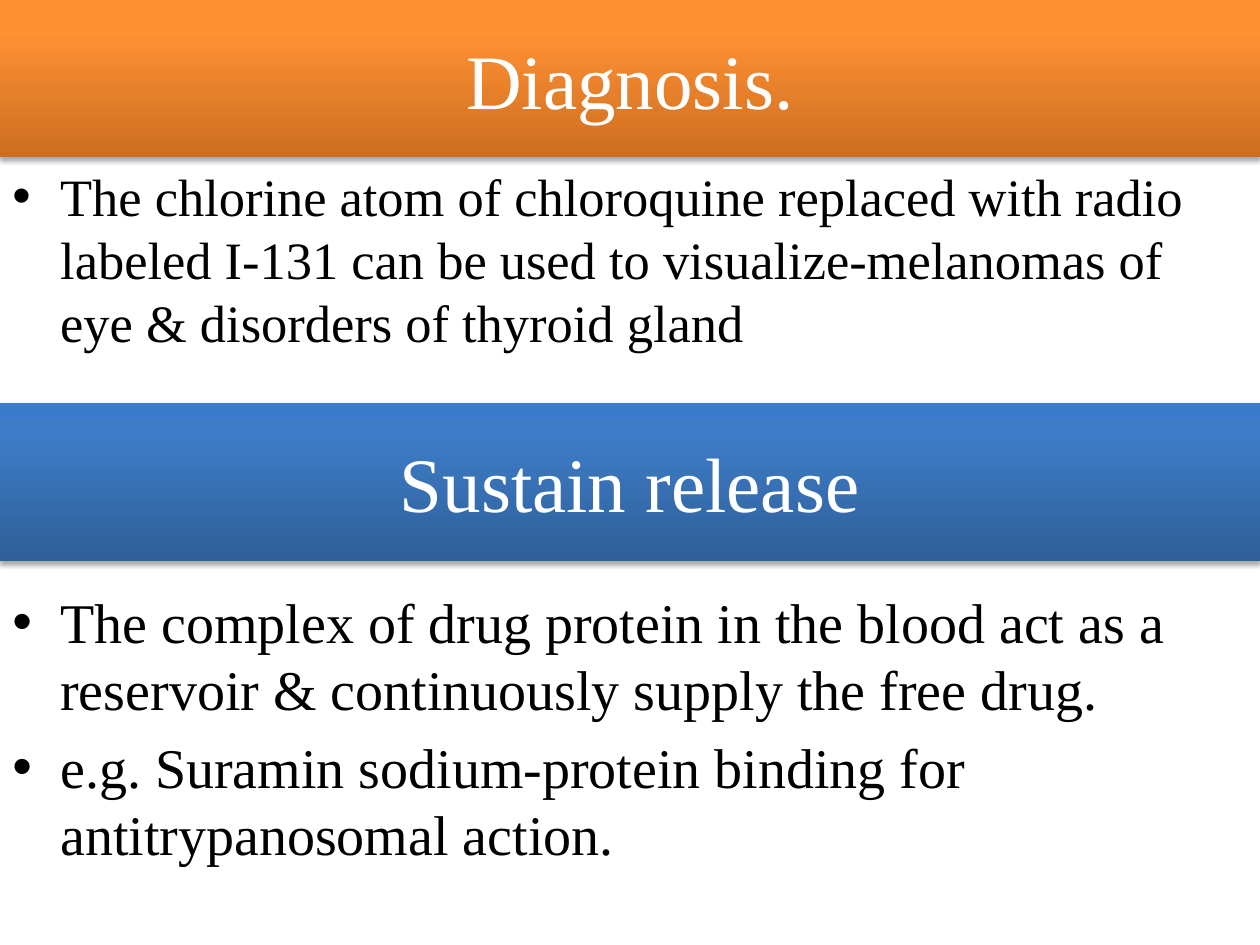
from dataclasses import dataclass

from lxml.etree import SubElement
from pptx import Presentation
from pptx.dml.color import RGBColor
from pptx.enum.shapes import MSO_SHAPE
from pptx.enum.text import MSO_ANCHOR, PP_ALIGN
from pptx.oxml.ns import qn
from pptx.util import Inches, Pt


@dataclass(frozen=True)
class Theme:
    font: str = "Times New Roman"
    heading_size: int = 44
    heading_color: str = "FFFFFF"
    body_color: str = "000000"
    shadow: str = "000000"
    # Gradient stops run from the bottom edge to the top edge.
    orange: tuple = ((0, "CC6E20"), (80, "FF9034"), (100, "FF9136"))
    blue: tuple = ((0, "2F5F99"), (80, "3D7CC7"), (100, "3A7CCB"))


THEME = Theme()
WIDTH, HEIGHT = Inches(10), Inches(7.5)
BANNER_SHARE = 1 / 6
INDENT = Inches(0.38)


def add_element(parent, tag, **attributes):
    return SubElement(parent, qn(tag), {key: str(value) for key, value in attributes.items()})


def fill_upward(shape, stops):
    """Fill with a gradient of (percent, colour) stops, bottom to top."""
    shape.fill.gradient()
    shape.fill.gradient_angle = 90
    stop_list = shape._element.spPr.find(qn("a:gradFill")).find(qn("a:gsLst"))
    for stop in list(stop_list):
        stop_list.remove(stop)
    for percent, color in stops:
        stop = add_element(stop_list, "a:gs", pos=percent * 1000)
        add_element(stop, "a:srgbClr", val=color)


def add_shadow(shape):
    shape.shadow.inherit = False
    effects = shape._element.spPr.find(qn("a:effectLst"))
    shadow = add_element(effects, "a:outerShdw", blurRad=Pt(3.1), dist=Pt(1.8),
                         dir=90 * 60000, rotWithShape=0)
    color = add_element(shadow, "a:srgbClr", val=THEME.shadow)
    add_element(color, "a:alpha", val=35000)


def write_text(para, text, *, size, color, align=PP_ALIGN.LEFT):
    para.alignment = align
    span = para.add_run()
    span.text = text
    span.font.name = THEME.font
    span.font.size = Pt(size)
    span.font.color.rgb = RGBColor.from_string(color)


def add_bullet(para):
    """Give the paragraph a hanging bullet and a gap of 20% above."""
    properties = para._p.get_or_add_pPr()
    properties.set("marL", str(INDENT))
    properties.set("indent", str(-INDENT))
    gap = add_element(properties, "a:spcBef")
    add_element(gap, "a:spcPct", val=20000)
    add_element(properties, "a:buFont", typeface="Arial")
    add_element(properties, "a:buChar", char="•")


def add_banner(page, box, text, stops):
    banner = page.shapes.add_shape(MSO_SHAPE.RECTANGLE, *box)
    banner.line.fill.background()
    fill_upward(banner, stops)
    add_shadow(banner)
    frame = banner.text_frame
    frame.word_wrap = True
    frame.vertical_anchor = MSO_ANCHOR.MIDDLE
    write_text(frame.paragraphs[0], text, size=THEME.heading_size,
               color=THEME.heading_color, align=PP_ALIGN.CENTER)


def add_bullet_list(page, box, items, size):
    frame = page.shapes.add_textbox(*box).text_frame
    frame.word_wrap = True
    for index, item in enumerate(items):
        para = frame.add_paragraph() if index else frame.paragraphs[0]
        write_text(para, item, size=size, color=THEME.body_color)
        add_bullet(para)


def add_section(page, box, heading, stops, items, size, gap=0):
    """Place a banner at the top of the box and its bullets below the gap."""
    left, top, width, height = box
    banner_height = int(HEIGHT * BANNER_SHARE)
    used = banner_height + gap
    add_banner(page, (left, top, width, banner_height), heading, stops)
    add_bullet_list(page, (left, top + used, width, height - used), items, size)


def main():
    deck = Presentation()
    deck.slide_width, deck.slide_height = WIDTH, HEIGHT
    page = deck.slides.add_slide(deck.slide_layouts[6])
    add_section(
        page, (0, 0, WIDTH, Inches(3.13)), "Diagnosis.", THEME.orange,
        ["The chlorine atom of chloroquine replaced with radio labeled I-131 can be "
         "used to visualize-melanomas of eye & disorders of thyroid gland"],
        size=30)
    add_section(
        page, (0, Inches(3.2), WIDTH, Inches(3.99)), "Sustain release", THEME.blue,
        ["The complex of drug protein in the blood act as a reservoir & continuously "
         "supply the free drug.",
         "e.g. Suramin sodium-protein binding for antitrypanosomal action."],
        size=32, gap=Inches(0.16))
    deck.save("out.pptx")


if __name__ == "__main__":
    main()
